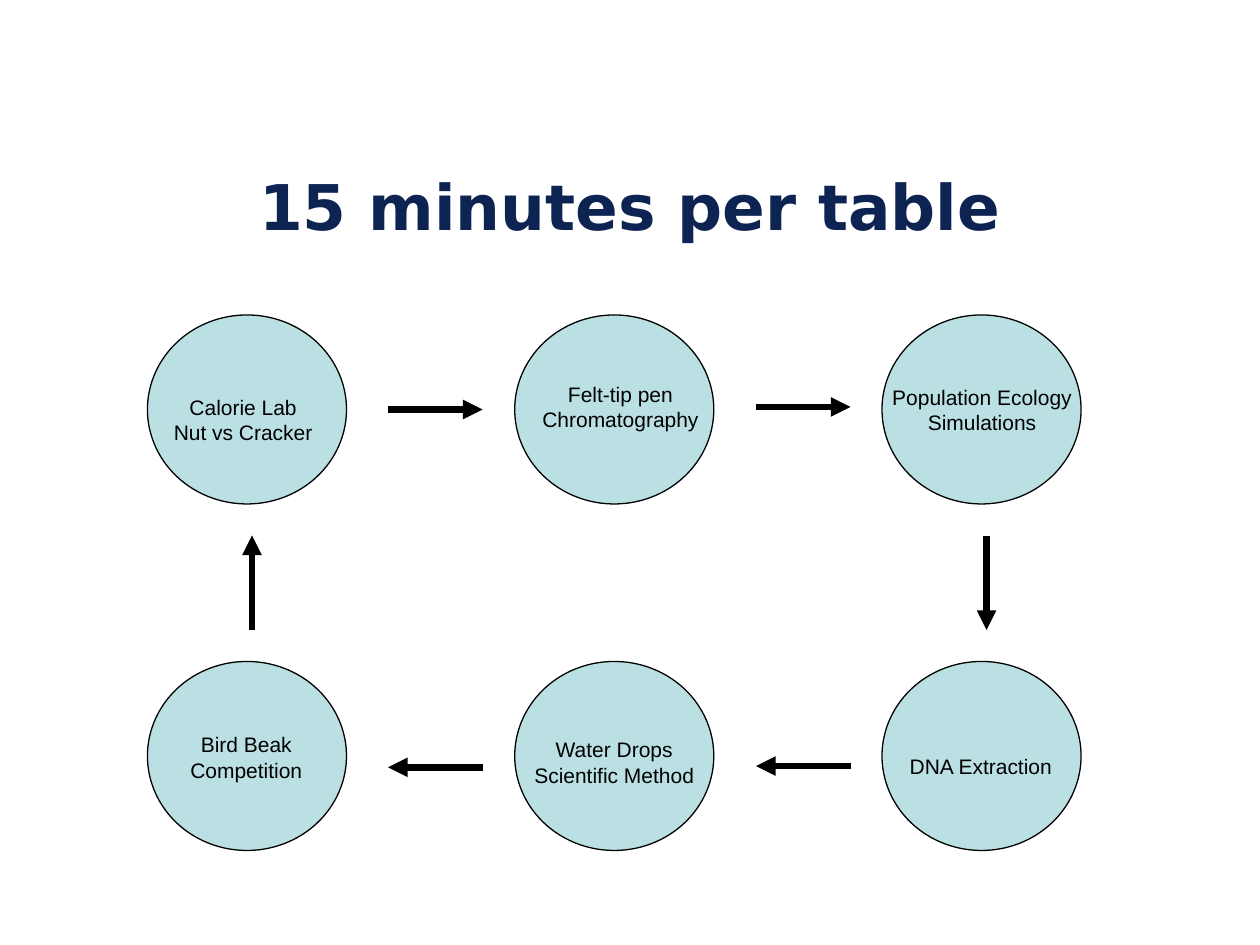
from lxml.etree import SubElement
from pptx import Presentation
from pptx.dml.color import RGBColor
from pptx.enum.shapes import MSO_CONNECTOR, MSO_SHAPE
from pptx.enum.text import MSO_ANCHOR, PP_ALIGN
from pptx.oxml.ns import qn
from pptx.util import Inches, Pt

CIRCLE_WIDTH, CIRCLE_HEIGHT = 1.58, 1.5
COLUMN_STEP, ROW_STEP = 2.915, 2.75
ARROW_LENGTH = 0.75

STATIONS = [
    (0, 0, ["Calorie Lab", "Nut vs Cracker"], (0.1, 0.58, 1.32, 0.5), False),
    (1, 0, ["Felt-tip pen", "Chromatography"], (0.09, 0.48, 1.5, 0.5), False),
    (2, 0, ["Population Ecology Simulations"], (-0.04, 0.5, 1.67, 0.5), True),
    (2, 1, ["DNA Extraction"], (0.12, 0.68, 1.33, 0.3), False),
    (1, 1, ["Water Drops", "Scientific Method"], (0, 0.55, 1.58, 0.5), False),
    (0, 1, ["Bird Beak", "Competition"], (0.16, 0.51, 1.25, 0.5), False),
]
ARROWS = [
    (1.91, 0.75, 1, 0),
    (4.83, 0.73, 1, 0),
    (6.66, 1.75, 0, 1),
    (5.58, 3.58, -1, 0),
    (2.66, 3.59, -1, 0),
    (0.83, 2.5, 0, -1),
]


def color(value):
    return RGBColor.from_string(value)


def write_text(frame, lines, size=12, font="Arial", fill="000000",
               bold=False, align=PP_ALIGN.CENTER, anchor=MSO_ANCHOR.TOP, wrap=True):
    frame.word_wrap = wrap
    frame.vertical_anchor = anchor
    for index, line in enumerate(lines):
        paragraph = frame.add_paragraph() if index else frame.paragraphs[0]
        paragraph.alignment = align
        paragraph.space_before = Pt(0)
        run = paragraph.add_run()
        run.text = line
        run.font.size = Pt(size)
        run.font.name = font
        run.font.bold = bold
        run.font.color.rgb = color(fill)


def add_title(slide, text, left, top, width, height):
    title = slide.shapes.title
    title.left, title.top = Inches(left), Inches(top)
    title.width, title.height = Inches(width), Inches(height)
    write_text(title.text_frame, [text], size=36, font="DejaVu Sans",
               fill="0D2352", bold=True, anchor=MSO_ANCHOR.MIDDLE)


def add_circle(slide, left, top):
    circle = slide.shapes.add_shape(
        MSO_SHAPE.OVAL, Inches(left), Inches(top),
        Inches(CIRCLE_WIDTH), Inches(CIRCLE_HEIGHT))
    circle.shadow.inherit = False
    circle.fill.solid()
    circle.fill.fore_color.rgb = color("BBE0E3")
    circle.line.color.rgb = color("000000")
    circle.line.width = Pt(0.75)


def add_label(slide, lines, left, top, width, height, wrap):
    label = slide.shapes.add_textbox(
        Inches(left), Inches(top), Inches(width), Inches(height))
    write_text(label.text_frame, lines, wrap=wrap)


def add_arrow(slide, left, top, across, down):
    arrow = slide.shapes.add_connector(
        MSO_CONNECTOR.STRAIGHT, Inches(left), Inches(top),
        Inches(left + across * ARROW_LENGTH), Inches(top + down * ARROW_LENGTH))
    arrow.line.color.rgb = color("000000")
    arrow.line.width = Pt(3.75)
    SubElement(arrow.line._get_or_add_ln(), qn("a:tailEnd"), type="triangle")
    SubElement(arrow._element.spPr, qn("a:effectLst"))


def add_rotation(slide, left, top):
    for column, row, *_ in STATIONS:
        add_circle(slide, left + column * COLUMN_STEP, top + row * ROW_STEP)
    for x, y, across, down in ARROWS:
        add_arrow(slide, left + x, top + y, across, down)
    for column, row, lines, (x, y, width, height), wrap in STATIONS:
        add_label(slide, lines, left + column * COLUMN_STEP + x,
                  top + row * ROW_STEP + y, width, height, wrap)


def main():
    presentation = Presentation()
    presentation.slide_width, presentation.slide_height = Inches(10), Inches(7.5)
    slide = presentation.slides.add_slide(presentation.slide_layouts[5])
    add_title(slide, "15 minutes per table", 0.75, 1.17, 8.5, 0.92)
    add_rotation(slide, 1.17, 2.5)
    presentation.save("out.pptx")


if __name__ == "__main__":
    main()
